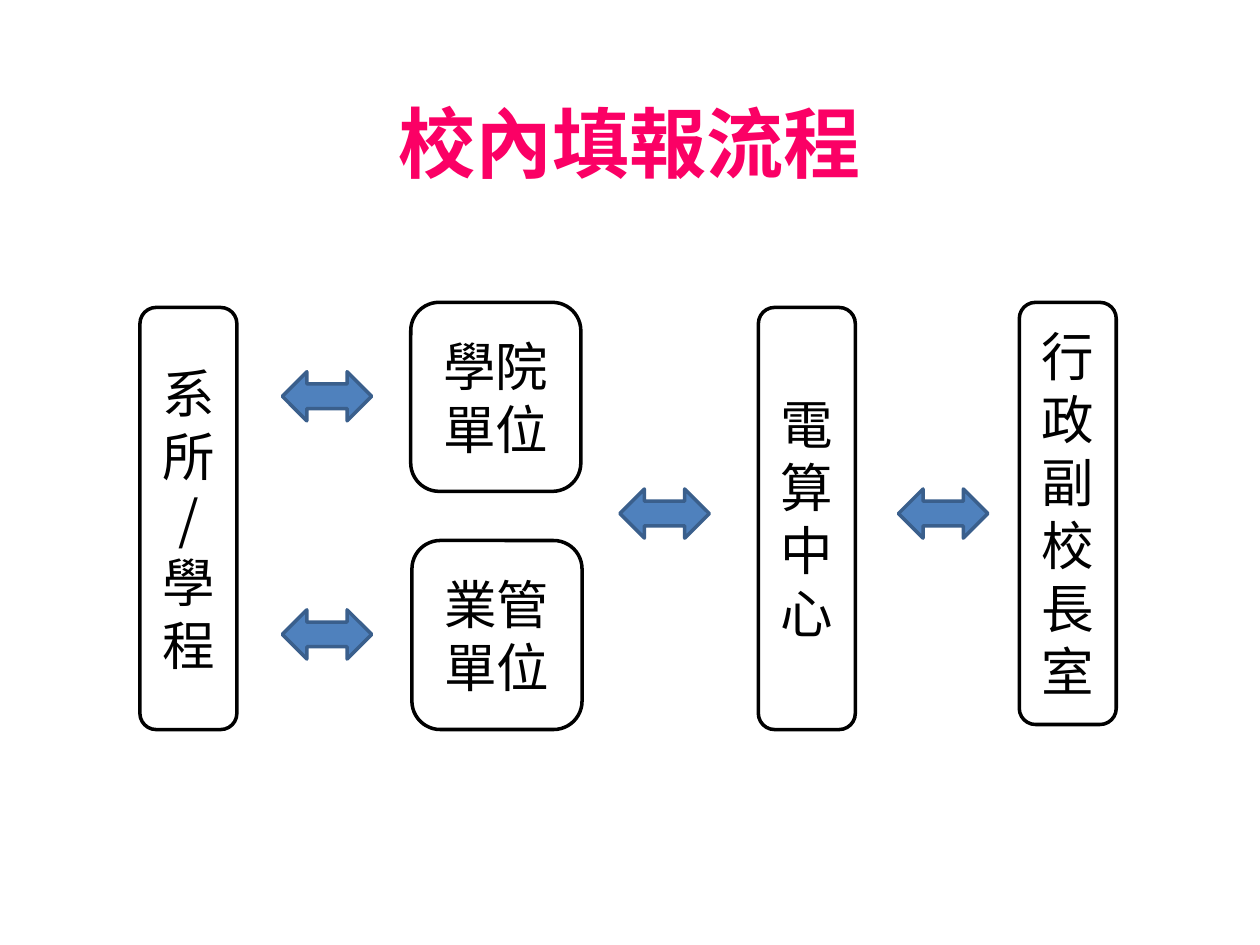
import pptx
import pptx.util
import pptx.dml.color
import pptx.enum.shapes
import pptx.enum.text
import pptx.oxml
import pptx.oxml.ns

Pt = pptx.util.Pt
RGBColor = pptx.dml.color.RGBColor
Shape = pptx.enum.shapes.MSO_SHAPE
Align = pptx.enum.text.PP_ALIGN
Anchor = pptx.enum.text.MSO_ANCHOR

PINK = RGBColor(0xFB, 0x00, 0x65)
BLUE = RGBColor(0x4F, 0x81, 0xBD)
NAVY = RGBColor(0x3A, 0x5F, 0x8C)
BLACK = RGBColor(0, 0, 0)
WHITE = RGBColor(255, 255, 255)

TALL = (55.4, 241.2)
BLOCK = (97.2, 108)
BOXES = [
    ("系所/學程", 80, 175.7, TALL),
    ("學院單位", 234.7, 172.8, BLOCK),
    ("業管單位", 235.4, 308.9, BLOCK),
    ("電算中心", 433.4, 175.7, TALL),
    ("行政副校長室", 582.5, 172.8, TALL),
]
ARROWS = [(161.3, 212.4), (161.3, 348.5), (354.2, 279.4), (513.4, 279.4)]


class Deck:
    font = "Noto Sans CJK SC"
    line = 2

    def __init__(self):
        self.file = pptx.Presentation()
        self.file.slide_width = Pt(720)
        self.file.slide_height = Pt(540)
        self.slide = self.file.slides.add_slide(self.file.slide_layouts[5])

    def label(self, shape, text, size, color, bold=False):
        frame = shape.text_frame
        frame.text = text
        frame.word_wrap = True
        frame.vertical_anchor = Anchor.MIDDLE
        para = frame.paragraphs[0]
        para.alignment = Align.CENTER
        font = para.runs[0].font
        font.name = self.font
        font.size = Pt(size)
        font.bold = bold
        font.color.rgb = color
        east = pptx.oxml.parse_xml(
            f'<a:ea {pptx.oxml.ns.nsdecls("a")} typeface="{self.font}"/>')
        font._element.find(pptx.oxml.ns.qn("a:latin")).addnext(east)
        return para

    def title(self, text):
        shape = self.slide.shapes.title
        shape.left, shape.top = Pt(36), Pt(36)
        shape.width, shape.height = Pt(648), Pt(90)
        self.label(shape, text, 44, PINK, True)

    def shape(self, kind, left, top, size, fill, edge):
        shape = self.slide.shapes.add_shape(
            kind, Pt(left), Pt(top), *map(Pt, size))
        shape.shadow.inherit = False
        shape.fill.solid()
        shape.fill.fore_color.rgb = fill
        shape.line.color.rgb = edge
        shape.line.width = Pt(self.line)
        return shape

    def box(self, text, left, top, size):
        shape = self.shape(
            Shape.ROUNDED_RECTANGLE, left, top, size, WHITE, BLACK)
        para = self.label(shape, text, 30, BLACK)
        para.line_spacing = Pt(36)

    def arrow(self, left, top):
        self.shape(Shape.LEFT_RIGHT_ARROW, left, top, (51.1, 28.1), BLUE, NAVY)


def main():
    deck = Deck()
    deck.title("校內填報流程")
    for box in BOXES:
        deck.box(*box)
    for spot in ARROWS:
        deck.arrow(*spot)
    deck.file.save("out.pptx")


if __name__ == "__main__":
    main()
